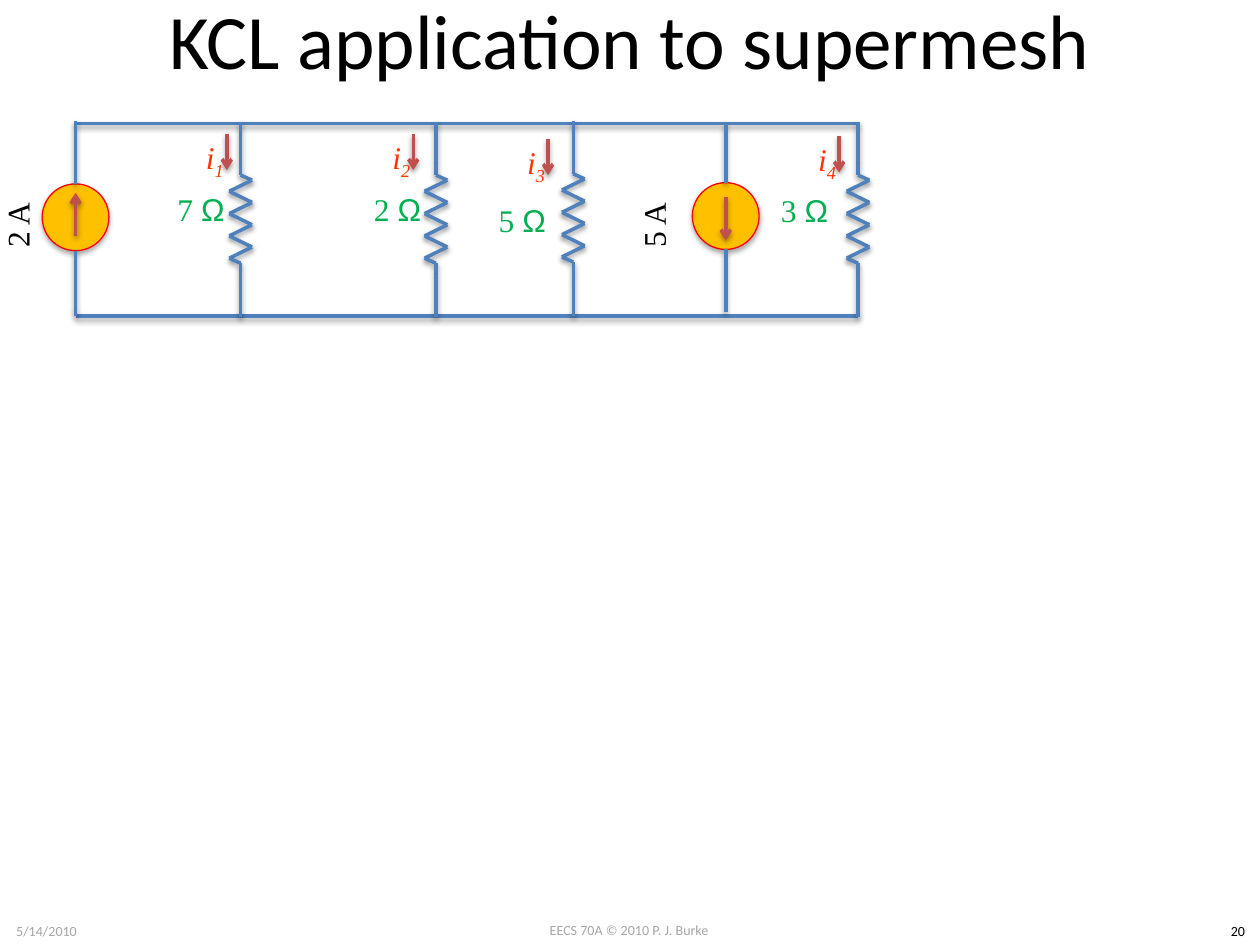
from itertools import pairwise

from lxml import etree
from pptx import Presentation
from pptx.dml.color import RGBColor
from pptx.enum.shapes import MSO_CONNECTOR, MSO_SHAPE
from pptx.enum.text import MSO_ANCHOR, MSO_AUTO_SIZE, PP_ALIGN
from pptx.oxml import parse_xml
from pptx.oxml.ns import nsdecls, qn
from pptx.util import Inches, Pt

WIRE = RGBColor(0x4F, 0x81, 0xBD)
ARROW = RGBColor(0xC0, 0x50, 0x4D)
SOURCE_FILL = RGBColor(0xFF, 0xC0, 0x00)
SOURCE_EDGE = RGBColor(0xFF, 0x00, 0x00)
OHMS = RGBColor(0x00, 0xB0, 0x50)
CURRENT = RGBColor(0xFF, 0x33, 0x00)
BLACK = RGBColor(0x00, 0x00, 0x00)
GREY = RGBColor(0xA6, 0xA6, 0xA6)

SERIF = "Times New Roman"
TOP_RAIL, BOTTOM_RAIL = 0.98, 2.51
LEFT_RAIL, RIGHT_RAIL = 0.6, 6.81
SOURCE_SIZE = 0.53

# Branch x, branch top, resistance, label left and top
RESISTORS = [
    (1.91, 0.97, "7", 1.0, 1.29),
    (3.46, 0.97, "2", 2.56, 1.29),
    (4.55, 0.96, "5", 3.55, 1.38),
    (6.81, 0.97, "3", 5.79, 1.3),
]
# Left and top of each current label, in order of subscript
CURRENTS = [(1.32, 0.96), (2.8, 0.96), (3.87, 1.0), (6.18, 0.98)]


def add_shadow(shape, alpha, distance):
    """Append a soft downward shadow; alpha in percent, distance in points."""
    shape._element.spPr.append(parse_xml(
        f'<a:effectLst {nsdecls("a")}>'
        f'<a:outerShdw blurRad="{Pt(3.1)}" dist="{Pt(distance)}" dir="5400000" rotWithShape="0">'
        f'<a:srgbClr val="000000"><a:alpha val="{alpha * 1000}"/></a:srgbClr>'
        '</a:outerShdw></a:effectLst>'))


def add_line(shapes, start, end, color=WIRE, arrow=False):
    line = shapes.add_connector(
        MSO_CONNECTOR.STRAIGHT, *(Inches(value) for value in (*start, *end)))
    line.line.color.rgb = color
    line.line.width = Pt(2)
    if arrow:
        etree.SubElement(line.line._get_or_add_ln(), qn("a:tailEnd"), type="arrow")
    add_shadow(line, 38, 1.6)


def add_label(shapes, box, parts, size, color, rotation=0, wrap=True):
    """Place one centred line made of (text, font name) parts; return its runs."""
    label = shapes.add_textbox(*(Inches(value) for value in box))
    label.rotation = rotation
    frame = label.text_frame
    frame.word_wrap = wrap
    frame.vertical_anchor = MSO_ANCHOR.MIDDLE
    paragraph = frame.paragraphs[0]
    paragraph.alignment = PP_ALIGN.CENTER
    for text, font_name in parts:
        run = paragraph.add_run()
        run.text = text
        run.font.name = font_name
        run.font.size = Pt(size)
        run.font.color.rgb = color
    return paragraph.runs


def add_resistor(slide, x, top):
    """Draw a branch from rail to rail with a zigzag in its middle."""
    half, pitch, zigzag_top = 0.09, 0.0885, 0.46
    peaks = [(half if step % 2 == 0 else -half, zigzag_top + step * pitch)
             for step in range(8)]
    outline = [(0, 0), (0, 0.33), (0, 0.42), *peaks, (0, 1.12), (0, 1.21), (0, 1.55)]
    points = [(x + dx, top + dy) for dx, dy in outline]
    branch = slide.shapes.add_group_shape()
    for start, end in pairwise(points):
        add_line(branch.shapes, start, end)


def add_resistance(slide, left, top, value):
    add_label(slide.shapes, (left, top, 1.19, 0.73),
              [(f"{value} ", SERIF), ("Ω", "Arial")], 18, OHMS)


def add_current(slide, left, top, index):
    """Draw a downward arrow with its subscripted current name."""
    marker = slide.shapes.add_group_shape()
    arrow_x = left + 0.48
    add_line(marker.shapes, (arrow_x, top + 0.1), (arrow_x, top + 0.39), ARROW, arrow=True)
    symbol, subscript = add_label(marker.shapes, (left, top, 0.77, 0.61),
                                  [("i", SERIF), (str(index), SERIF)], 18, CURRENT)
    symbol.font.italic = subscript.font.italic = True
    subscript._r.get_or_add_rPr().set("baseline", "-25000")


def add_current_source(slide, x, top, wire_top, wire_bottom, arrow_ends, amps, label_left):
    add_label(slide.shapes, (label_left, 1.42, 1.19, 0.73), [(amps, SERIF)], 18, BLACK, 270)
    source = slide.shapes.add_group_shape()
    circle = source.shapes.add_shape(
        MSO_SHAPE.OVAL, Inches(x - SOURCE_SIZE / 2), Inches(top),
        Inches(SOURCE_SIZE), Inches(SOURCE_SIZE))
    circle.fill.solid()
    circle.fill.fore_color.rgb = SOURCE_FILL
    circle.line.color.rgb = SOURCE_EDGE
    circle.line.width = Pt(0.75)
    add_shadow(circle, 35, 1.8)
    tail, head = arrow_ends
    add_line(source.shapes, (x, tail), (x, head), ARROW, arrow=True)
    add_line(source.shapes, (x, top), (x, wire_top))
    add_line(source.shapes, (x, top + SOURCE_SIZE), (x, wire_bottom))


def add_circuit(slide):
    for rail in (TOP_RAIL, BOTTOM_RAIL):
        add_line(slide.shapes, (LEFT_RAIL, rail), (RIGHT_RAIL, rail))
    for x, top, value, label_left, label_top in RESISTORS:
        add_resistor(slide, x, top)
        add_resistance(slide, label_left, label_top, value)
    add_current_source(slide, LEFT_RAIL, 1.46, 0.96, 2.46, (1.87, 1.53), "2 A", -0.46)
    add_line(slide.shapes, (LEFT_RAIL, BOTTOM_RAIL), (LEFT_RAIL, 2.45))
    add_current_source(slide, 5.76, 1.45, TOP_RAIL, 2.48, (1.56, 1.91), "5 A", 4.59)
    for index, (left, top) in enumerate(CURRENTS, start=1):
        add_current(slide, left, top, index)


def add_title(slide):
    title = slide.shapes.title
    title.left, title.top = Inches(0.5), Inches(-0.17)
    title.width, title.height = Inches(9), Inches(0.95)
    frame = title.text_frame
    frame.text = "KCL application to supermesh"
    frame.auto_size = MSO_AUTO_SIZE.NONE
    frame.vertical_anchor = MSO_ANCHOR.MIDDLE
    paragraph = frame.paragraphs[0]
    paragraph.alignment = PP_ALIGN.CENTER
    font = paragraph.runs[0].font
    font.name, font.size = "Calibri", Pt(44)
    font.color.rgb = BLACK


def add_footer(slide):
    for text, left, top, width, color in (
        ("EECS 70A © 2010 P. J. Burke", 3.83, 7.26, 2.33, GREY),
        ("5/14/2010", 0, 7.27, 0.74, GREY),
        ("20", 9.65, 7.27, 0.35, BLACK),
    ):
        add_label(slide.shapes, (left, top, width, 0.24), [(text, "Calibri")], 8, color,
                  wrap=False)


def main():
    presentation = Presentation()
    presentation.slide_width = Inches(10)
    presentation.slide_height = Inches(7.5)
    slide = presentation.slides.add_slide(presentation.slide_layouts[5])
    add_footer(slide)
    add_title(slide)
    add_circuit(slide)
    presentation.save("out.pptx")


if __name__ == "__main__":
    main()
